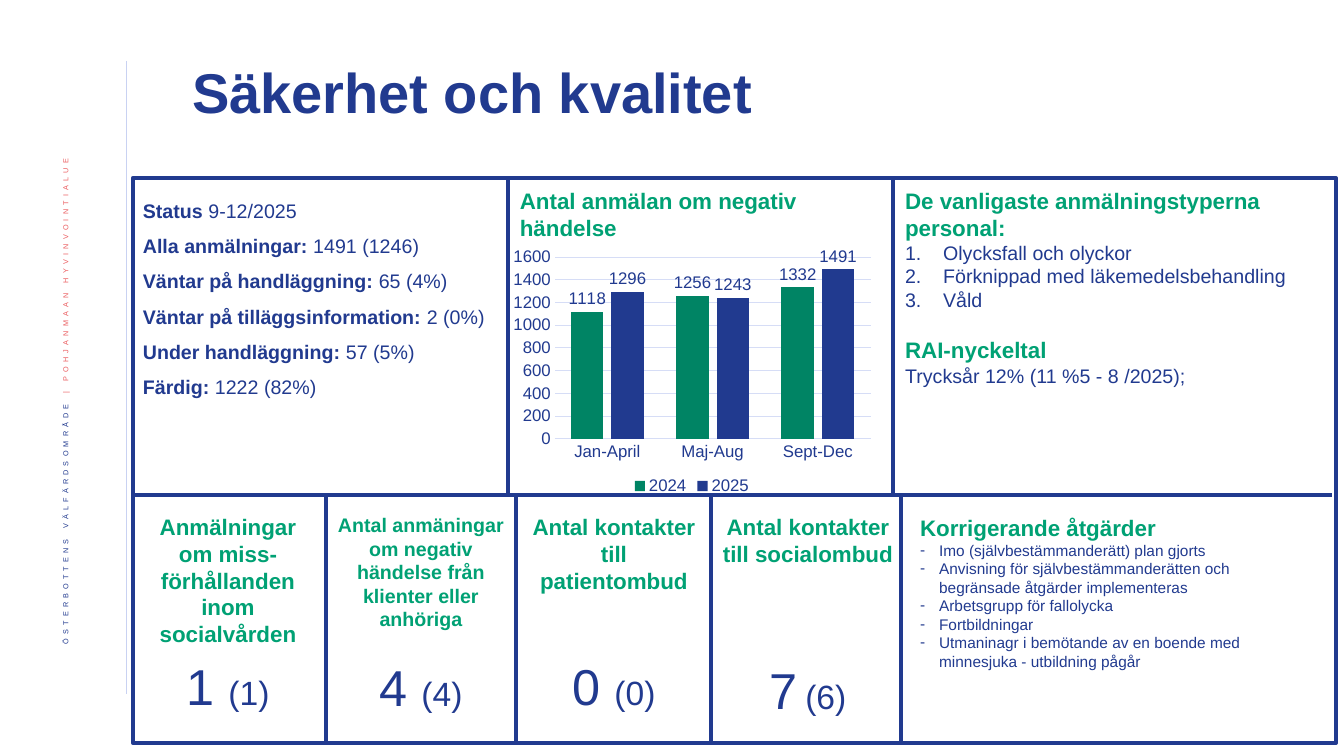
import pptx
import pptx.chart.data
import pptx.dml.color
import pptx.enum.chart
import pptx.enum.shapes
import pptx.enum.text
import pptx.oxml
import pptx.oxml.ns
import pptx.util
from dataclasses import dataclass, field


@dataclass(frozen=True)
class Theme:
    font: str = "Arial"
    navy: str = "213A8F"
    grid: str = "D6DDF6"
    rule: str = "C9D2F2"
    bars: tuple = ("008464", "213A8F")
    frame_width: float = 3
    chart_size: int = 12
    styles: dict = field(default_factory=lambda: {
        "title": (40, "213A8F", True),
        "heading": (16, "00A174", True),
        "small heading": (14, "00A174", True),
        "label": (14, "213A8F", True),
        "body": (14, "213A8F", False),
        "action": (11, "213A8F", False),
        "number": (36, "213A8F", False),
        "gap": (20, "213A8F", False),
        "earlier": (24, "213A8F", False),
        "region": (9, "213A8F", False),
        "region accent": (9, "EB5C5F", False),
    })


THEME = Theme()
SCALE = 914400 / 100.8

TITLE = "Säkerhet och kvalitet"
REGION = [("ÖSTERBOTTENS VÄLFÄRDSOMRÅDE ", "region"),
          ("| POHJANMAAN HYVINVOINTIALUE ", "region accent")]
STATUS = [
    ("Status", " 9-12/2025"),
    ("Alla anmälningar: ", "1491 (1246)"),
    ("Väntar på handläggning: ", "65 (4%)"),
    ("Väntar på tilläggsinformation: ", "2 (0%)"),
    ("Under handläggning: ", "57 (5%)"),
    ("Färdig: ", "1222 (82%)"),
]
CHART_HEADING = "Antal anmälan om negativ händelse"
PERIODS = ["Jan-April", "Maj-Aug", "Sept-Dec"]
REPORTS = {"2024": (1118, 1256, 1332), "2025": (1296, 1243, 1491)}
TYPES_HEADING = "De vanligaste anmälningstyperna personal:"
TYPES = ["Olycksfall och olyckor", "Förknippad med läkemedelsbehandling", "Våld"]
RAI_HEADING = "RAI-nyckeltal"
RAI_TEXT = "Trycksår 12% (11 %5 - 8 /2025);"
ACTIONS_HEADING = "Korrigerande åtgärder"
ACTIONS = [
    "Imo (självbestämmanderätt) plan gjorts",
    "Anvisning för självbestämmanderätten och begränsade åtgärder implementeras",
    "Arbetsgrupp för fallolycka",
    "Fortbildningar",
    "Utmaninagr i bemötande av en boende med minnesjuka - utbildning pågår",
]
TILES = [
    (133, 650, "Anmälningar om miss-förhållanden inom socialvården", "heading",
     [("1 ", "number"), ("(1)", "earlier")]),
    (326, 651, "Antal anmäningar om negativ händelse från klienter eller anhöriga",
     "small heading", [("4 ", "number"), ("(4)", "earlier")]),
    (519, 650, "Antal kontakter till patientombud", "heading",
     [("0 ", "number"), ("(0)", "earlier")]),
    (713, 654, "Antal kontakter till socialombud", "heading",
     [("7", "number"), (" ", "gap"), ("(6)", "earlier")]),
]
TILE_TOP, TILE_WIDTH = 508, 190
LEFT, TOP, RIGHT, BOTTOM, MIDDLE = 133, 178, 1336, 743, 495
UPPER_DIVIDERS = (508, 893)
LOWER_DIVIDERS = (326, 516, 711, 901)

ALIGN = pptx.enum.text.PP_ALIGN


def px(length):
    return pptx.util.Emu(round(length * SCALE))


def color(value):
    return pptx.dml.color.RGBColor.from_string(value)


def place(box, left, top, width, height):
    box.left, box.top, box.width, box.height = map(px, (left, top, width, height))


def set_bullet(para, tag, indent=0, **attributes):
    properties = para._p.get_or_add_pPr()
    properties.set("marL", str(px(indent)))
    properties.set("indent", str(-px(indent)))
    bullet = pptx.oxml.parse_xml(f"<a:{tag} {pptx.oxml.ns.nsdecls('a')}/>")
    for name, value in attributes.items():
        bullet.set(name, value)
    properties.append(bullet)


def write(box, paragraphs, align=ALIGN.LEFT, spacing=1.0):
    frame = box.text_frame
    frame.word_wrap = True
    frame.auto_size = pptx.enum.text.MSO_AUTO_SIZE.NONE
    paras = []
    for index, spans in enumerate(paragraphs):
        para = frame.paragraphs[0] if index == 0 else frame.add_paragraph()
        para.alignment = align
        para.line_spacing = spacing
        para.space_before = pptx.util.Pt(0)
        for text, style in spans:
            span = para.add_run()
            span.text = text
            size, tint, bold = THEME.styles[style]
            span.font.name = THEME.font
            span.font.size = pptx.util.Pt(size)
            span.font.bold = bold
            span.font.color.rgb = color(tint)
        paras.append(para)
    return paras


def add_text(page, area, paragraphs, **options):
    box = page.shapes.add_textbox(*map(px, area))
    write(box, paragraphs, **options)
    return box


def add_line(page, x1, y1, x2, y2, tint=THEME.navy, width=THEME.frame_width):
    line = page.shapes.add_connector(
        pptx.enum.shapes.MSO_CONNECTOR.STRAIGHT, *map(px, (x1, y1, x2, y2)))
    line.line.color.rgb = color(tint)
    line.line.width = pptx.util.Pt(width)
    line._element.spPr.append(
        pptx.oxml.parse_xml(f"<a:effectLst {pptx.oxml.ns.nsdecls('a')}/>"))


def add_frame(page):
    add_line(page, 126, 61, 126, 694, THEME.rule, 0.5)
    frame = page.shapes.add_shape(
        pptx.enum.shapes.MSO_SHAPE.RECTANGLE,
        *map(px, (LEFT, TOP, RIGHT - LEFT, BOTTOM - TOP)))
    frame.shadow.inherit = False
    frame.fill.background()
    frame.line.color.rgb = color(THEME.navy)
    frame.line.width = pptx.util.Pt(THEME.frame_width)
    add_line(page, LEFT, MIDDLE, 1332, MIDDLE)
    for x in UPPER_DIVIDERS:
        add_line(page, x, TOP, x, MIDDLE)
    for x in LOWER_DIVIDERS:
        add_line(page, x, MIDDLE, x, BOTTOM)


def add_region(page):
    box = add_text(page, (42, 143, 52, 578), [REGION], align=ALIGN.RIGHT, spacing=0.9)
    box.text_frame.vertical_anchor = pptx.enum.text.MSO_ANCHOR.MIDDLE
    box.text_frame._txBody.bodyPr.set("vert", "vert270")
    for span in box.text_frame.paragraphs[0].runs:
        span.font._element.set("baseline", "30000")
        span.font._element.set("spc", "300")


def add_report_chart(page):
    data = pptx.chart.data.CategoryChartData()
    data.categories = PERIODS
    for year, values in REPORTS.items():
        data.add_series(year, values)
    kinds = pptx.enum.chart
    chart = page.shapes.add_chart(
        kinds.XL_CHART_TYPE.COLUMN_CLUSTERED, *map(px, (506, 243, 372, 256)), data).chart
    chart.has_title = False
    chart.has_legend = True
    chart.legend.position = kinds.XL_LEGEND_POSITION.BOTTOM
    chart.legend.include_in_layout = False
    plot = chart.plots[0]
    plot.vary_by_categories = False
    plot.gap_width, plot.overlap = 100, -24
    plot.has_data_labels = True
    plot.data_labels.show_value = True
    plot.data_labels.position = kinds.XL_LABEL_POSITION.OUTSIDE_END
    for series, tint in zip(plot.series, THEME.bars):
        series.format.fill.solid()
        series.format.fill.fore_color.rgb = color(tint)
    across, upright = chart.category_axis, chart.value_axis
    upright.minimum_scale, upright.maximum_scale, upright.major_unit = 0, 1600, 200
    upright.format.line.fill.background()
    for axis in (across, upright):
        axis.major_tick_mark = axis.minor_tick_mark = kinds.XL_TICK_MARK.NONE
    for line in (across.format.line, upright.major_gridlines.format.line):
        line.color.rgb = color(THEME.grid)
        line.width = pptx.util.Pt(0.75)
    for part in (chart, chart.legend, across.tick_labels, upright.tick_labels,
                 plot.data_labels):
        part.font.name = THEME.font
        part.font.size = pptx.util.Pt(THEME.chart_size)
        part.font.color.rgb = color(THEME.navy)


def fill_lists(types_box, actions_box):
    place(types_box, 895, 182, 440, 214)
    paras = write(types_box, [[(TYPES_HEADING, "heading")],
                              *([(item, "body")] for item in TYPES),
                              [(RAI_HEADING, "heading")], [(RAI_TEXT, "body")]])
    for index, para in enumerate(paras):
        if 1 <= index <= len(TYPES):
            set_bullet(para, "buAutoNum", 38, type="arabicPeriod")
        else:
            set_bullet(para, "buNone")
    paras[-2].space_before = pptx.util.Pt(18)

    place(actions_box, 910, 509, 411, 168)
    heading, *items = write(actions_box, [[(ACTIONS_HEADING, "heading")],
                                          *([(item, "action")] for item in ACTIONS)])
    set_bullet(heading, "buNone")
    for para in items:
        set_bullet(para, "buChar", 19, char="-")


def main():
    deck = pptx.Presentation()
    deck.slide_width, deck.slide_height = px(1344), px(756)
    page = deck.slides.add_slide(deck.slide_layouts[3])
    for holder in list(page.placeholders):
        if holder.placeholder_format.idx > 2:
            holder._element.getparent().remove(holder._element)
    title = page.shapes.title
    place(title, 182, 45, 1140, 100)
    write(title, [[(TITLE, "title")]], spacing=0.9)
    title.text_frame.vertical_anchor = pptx.enum.text.MSO_ANCHOR.MIDDLE
    fill_lists(page.placeholders[1], page.placeholders[2])
    add_frame(page)
    add_region(page)
    add_text(page, (133, 182, 377, 255),
             [[(label, "label"), (value, "body")] for label, value in STATUS], spacing=1.5)
    add_text(page, (510, 182, 384, 65), [[(CHART_HEADING, "heading")]])
    for left, number_top, heading, style, number in TILES:
        add_text(page, (left, TILE_TOP, TILE_WIDTH, 146), [[(heading, style)]],
                 align=ALIGN.CENTER)
        add_text(page, (left, number_top, TILE_WIDTH, 72), [number], align=ALIGN.CENTER)
    add_report_chart(page)
    deck.save("out.pptx")


if __name__ == "__main__":
    main()
